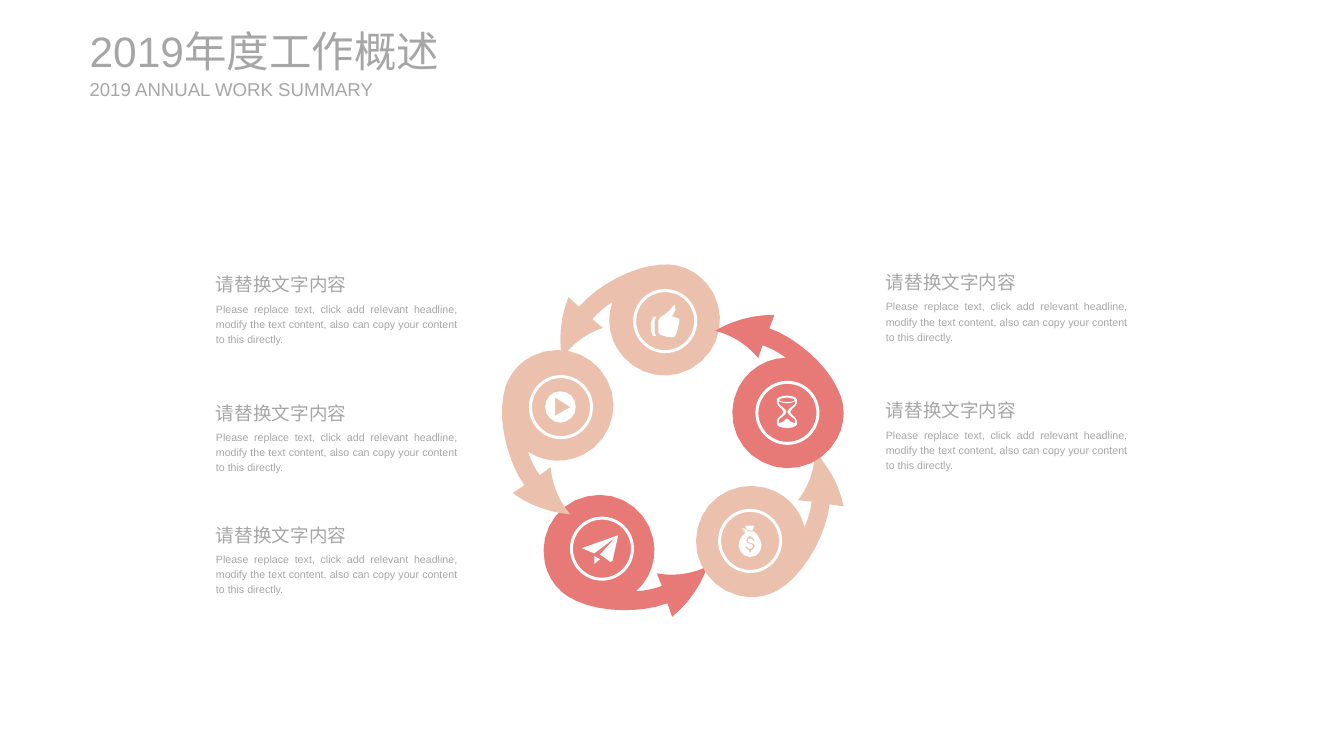
import dataclasses
import math

import pptx
import pptx.dml.color
import pptx.enum.shapes
import pptx.enum.text
import pptx.util

Pt = pptx.util.Pt


@dataclasses.dataclass(frozen=True)
class Theme:
    font: str = "Arial"
    grey: str = "A6A6A6"
    coral: str = "E77976"
    peach: str = "EBC1AD"
    white: str = "FFFFFF"
    title_size: float = 32
    heading_size: float = 14
    body_size: float = 8
    badge_line: float = 2.25


THEME = Theme()
GRID = 0.72  # points per artwork unit
BADGE_SIZE = 46

HEADING = "请替换文字内容"
BODY = ("Please replace text, click add relevant headline, modify the text "
        "content, also can copy your content to this directly.")

# Outlines: M move, C curve, L line, Z close, measured from the centre
SWOOSH = """M -89 -15 C -70 -37 -34 -57 -4 -59 C 14 -61 32 -54 44 -40
C 65 -16 63 21 39 42 C 15 64 -22 61 -43 37 C -57 21 -61 -1 -54 -20
C -62 -15 -69 -9 -75 -2 L -64 7 C -79 12 -95 22 -107 39
C -110 19 -109 -3 -100 -25 Z"""
PLANE = """M -8 16 L -2 11 L -8 8 Z
M 17 -14 L -21 -0.5 L -13 3 L -8 5 L 14.5 -12 L -2 6 L 9 14 L 11 13 Z"""
MONEY_BAG = """M 3 9 L 1 10 L 1 12 L -1 12 L -1 10 L -3 9 L -5 6 L -3 6
L -2 8 L 0 8 L 2 8 L 3 6 L 2 4 L 0 3 L -3 2 L -4 0 L -3 -3 L -1 -4
L -1 -5 L 1 -5 L 1 -4 L 3 -3 L 5 0 L 3 0 L 2 -2 L 0 -2 L -2 -2 L -2 0
L -2 1 L 0 2 L 4 3 L 5 6 Z
M 4 -10 L -4 -10 L -3 -11 L 3 -11 L 4 -16 L -5 -16 L -3 -11
L -6 -13 L -9 -13 L -4 -10 L -8 -10 L -6 -9 L -4 -9
C -9 -6 -12 0 -12 5 C -12 11 -6 17 0 17 C 7 17 12 11 12 5
C 12 0 8 -7 4 -10 Z"""
PLAY = """M 11 -12 C 4 -18 -6 -18 -12 -12 C -18 -5 -18 5 -12 11
C -6 18 4 18 11 11 C 17 5 17 -5 11 -12 Z M -6 -10 L 10 0 L -6 9 Z"""
THUMB = """M -9 -5 C -11 -5 -15 -4 -15 1 L -15 10 C -15 16 -11 16 -9 16
C -8 16 -11 15 -11 12 L -11 0 C -11 -4 -8 -5 -9 -5 Z
M 7 -5 C 7 -6 14 -12 10 -17 C 9 -18 6 -11 1 -8 C -2 -6 -7 -3 -7 -1
L -7 12 C -7 15 2 17 9 17 C 12 17 15 1 15 -2 C 15 -4 7 -4 7 -5 Z"""
HOURGLASS = """M 0 -1 C 0 1 2 2 4 4 C 6 5 8 7 8 8 L 8 11
C 6 10 0 9 0 6 L -1 6 C -1 9 -7 10 -9 11 L -9 8
C -9 7 -7 5 -5 4 C -3 2 -1 1 -1 -1 C -1 -3 -3 -4 -5 -6
C -7 -7 -9 -9 -9 -10 L -9 -12 C -7 -11 -4 -10 0 -10
C 3 -10 6 -11 8 -12 L 8 -10 C 8 -9 6 -7 4 -6 C 2 -4 0 -3 0 -1 Z
M -8 -14 C -7 -15 -4 -16 0 -16 C 4 -16 7 -14 7 -14 L 8 -13
C 6 -12 3 -11 0 -11 C -4 -11 -7 -12 -9 -13 Z
M 10 -10 L 10 -14 C 10 -16 5 -18 0 -18 C -6 -18 -11 -16 -11 -14
L -11 -10 C -11 -7 -4 -4 -4 -1 C -4 2 -11 5 -11 8 L -11 12
C -11 14 -6 16 0 16 C 5 16 10 14 10 12 L 10 8 C 10 5 3 2 3 -1
C 3 -4 10 -7 10 -10 Z"""

# Disc centre, badge centre, turn in degrees, colour, icon
STAGES = [
    ((75.6, 216), (77, 215.3), 209, THEME.coral, PLANE),
    ((189.4, 208.8), (188.6, 209.5), 146, THEME.peach, MONEY_BAG),
    ((44.6, 108), (46.1, 108.7), 284, THEME.peach, PLAY),
    ((123.8, 43.9), (124.6, 43.9), 0, THEME.peach, THUMB),
    ((216, 113), (216.7, 113), 69, THEME.coral, HOURGLASS),
]


def rgb(colour):
    return pptx.dml.color.RGBColor.from_string(colour)


def add_text(slide, text, left, top, width, height, *, size,
             align=None, line_spacing=None, anchor=None):
    box = slide.shapes.add_textbox(Pt(left), Pt(top), Pt(width), Pt(height))
    frame = box.text_frame
    frame.word_wrap = True
    frame.auto_size = pptx.enum.text.MSO_AUTO_SIZE.SHAPE_TO_FIT_TEXT
    frame.margin_left = frame.margin_right = 0
    frame.margin_top = frame.margin_bottom = 0
    frame.vertical_anchor = anchor
    paragraph = frame.paragraphs[0]
    paragraph.alignment = align
    paragraph.line_spacing = line_spacing
    run = paragraph.add_run()
    run.text = text
    run.font.name = THEME.font
    run.font.size = Pt(size)
    run.font.color.rgb = rgb(THEME.grey)


def trace(outline):
    """Turn an outline into contours, each a list of points."""
    contours = []
    tokens = iter(outline.split())
    for command in tokens:
        if command == "Z":
            continue
        count = 3 if command == "C" else 1
        points = [(float(next(tokens)), float(next(tokens))) for _ in range(count)]
        if command == "M":
            contours.append(points)
        elif command == "L":
            contours[-1] += points
        else:
            # Longer curves get more steps
            curve = [contours[-1][-1], *points]
            steps = max(1, round(0.8 * math.sqrt(math.dist(curve[0], curve[3]))))
            for step in range(1, steps + 1):
                t = step / steps
                weights = [math.comb(3, i) * t**i * (1 - t)**(3 - i) for i in range(4)]
                contours[-1].append(tuple(
                    sum(w * p[axis] for w, p in zip(weights, curve)) for axis in (0, 1)))
    return contours


def add_outline(shapes, outline, centre, colour, turn=0):
    cos, sin = math.cos(math.radians(turn)), math.sin(math.radians(turn))

    def place(point):
        x, y = point
        return (round(100 * (centre[0] + GRID * (x * cos - y * sin))),
                round(100 * (centre[1] + GRID * (x * sin + y * cos))))

    builder = None
    for contour in trace(outline):
        start, *rest = map(place, contour)
        if builder is None:
            builder = shapes.build_freeform(*start, scale=Pt(1) / 100)
        else:
            builder.move_to(*start)
        builder.add_line_segments(rest, close=True)
    figure = builder.convert_to_shape()
    figure.shadow.inherit = False
    figure.fill.solid()
    figure.fill.fore_color.rgb = rgb(colour)
    figure.line.fill.background()


def add_badge(shapes, centre):
    badge = shapes.add_shape(
        pptx.enum.shapes.MSO_SHAPE.OVAL,
        Pt(centre[0] - BADGE_SIZE / 2), Pt(centre[1] - BADGE_SIZE / 2),
        Pt(BADGE_SIZE), Pt(BADGE_SIZE))
    badge.shadow.inherit = False
    badge.fill.background()
    badge.line.color.rgb = rgb(THEME.white)
    badge.line.width = Pt(THEME.badge_line)


def add_cycle(slide, left, top):
    for disc, badge, turn, colour, icon in STAGES:
        badge_centre = left + badge[0], top + badge[1]
        add_outline(slide.shapes, SWOOSH, (left + disc[0], top + disc[1]), colour, turn)
        add_badge(slide.shapes, badge_centre)
        add_outline(slide.shapes, icon, badge_centre, THEME.white)


def add_note(slide, left, top):
    justified = {"align": pptx.enum.text.PP_ALIGN.JUSTIFY, "line_spacing": 1.2}
    add_text(slide, HEADING, left, top, 160.6, 18.7, size=THEME.heading_size, **justified)
    add_text(slide, BODY, left, top + 23.5, 182.2, 33.8, size=THEME.body_size, **justified)


def add_title(slide, left, top):
    middle = pptx.enum.text.MSO_ANCHOR.MIDDLE
    add_text(slide, "2019年度工作概述", left, top, 311, 38.8,
             size=THEME.title_size, anchor=middle)
    add_text(slide, "2019 ANNUAL WORK SUMMARY", left, top + 39.5, 221, 17,
             size=THEME.heading_size, anchor=middle)


def main():
    deck = pptx.Presentation()
    deck.slide_width, deck.slide_height = Pt(1012.5), Pt(569.5)
    slide = deck.slides.add_slide(deck.slide_layouts[6])

    # Ring of five stages
    add_cycle(slide, 376.5, 198)

    # Notes on both sides
    for left, tops in ((162.7, (202.5, 299.2, 391)), (667.4, (200.8, 297.5))):
        for top in tops:
            add_note(slide, left, top)

    # Title and subtitle
    add_title(slide, 67.5, 18.8)

    deck.save("out.pptx")


if __name__ == "__main__":
    main()
